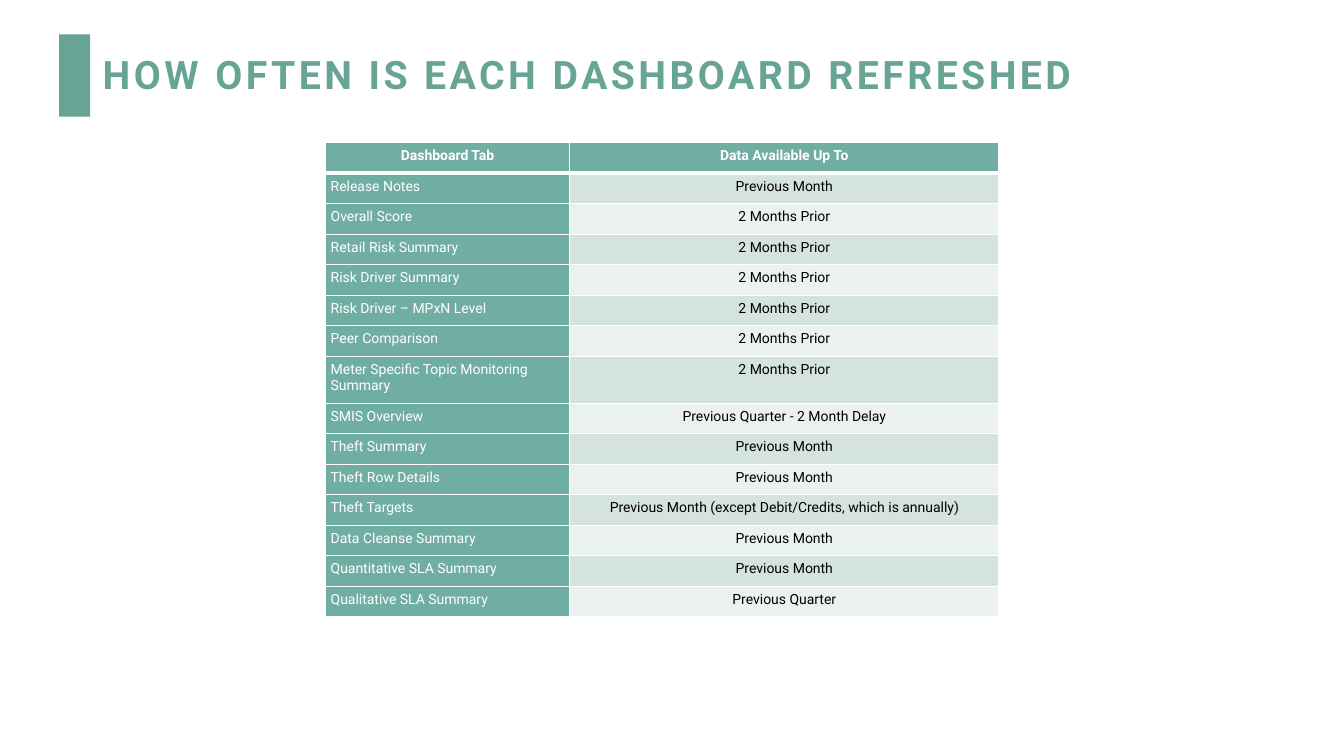
"""Build the slide on how often each dashboard is refreshed."""
from lxml.etree import SubElement
from pptx import Presentation
from pptx.dml.color import RGBColor
from pptx.enum.shapes import MSO_SHAPE
from pptx.enum.text import MSO_ANCHOR, PP_ALIGN
from pptx.oxml.ns import qn
from pptx.util import Pt

FONT = "Roboto"
HUES = {"title": "68A495", "teal": "70ADA3", "dark": "D5E3E0",
        "light": "EBF1F0", "white": "FFFFFF", "head": "FEFEFE", "black": "000000"}
ROWS = [
    ("Dashboard Tab", "Data Available Up To"),
    ("Release Notes", "Previous Month"),
    ("Overall Score", "2 Months Prior"),
    ("Retail Risk Summary", "2 Months Prior"),
    ("Risk Driver Summary", "2 Months Prior"),
    ("Risk Driver – MPxN Level", "2 Months Prior"),
    ("Peer Comparison", "2 Months Prior"),
    ("Meter Specific Topic Monitoring Summary", "2 Months Prior"),
    ("SMIS Overview", "Previous Quarter - 2 Month Delay"),
    ("Theft Summary", "Previous Month"),
    ("Theft Row Details", "Previous Month"),
    ("Theft Targets", "Previous Month (except Debit/Credits, which is annually)"),
    ("Data Cleanse Summary", "Previous Month"),
    ("Quantitative SLA Summary", "Previous Month"),
    ("Qualitative SLA Summary", "Previous Quarter"),
]
TALL = 7


def add_run(para, text, size, hue, bold):
    run = para.add_run()
    run.text = text
    run.font.name = FONT
    run.font.size = Pt(size)
    run.font.bold = bold
    run.font.color.rgb = RGBColor.from_string(HUES[hue])
    return run


def add_edge(cell, side, width):
    props = cell._tc.get_or_add_tcPr()
    line = SubElement(props, qn(f"a:{side}"), w=str(Pt(width)))
    fill = SubElement(line, qn("a:solidFill"))
    SubElement(fill, qn("a:srgbClr"), val=HUES["white"])


deck = Presentation()
deck.slide_width, deck.slide_height = Pt(960), Pt(540)
slide = deck.slides.add_slide(deck.slide_layouts[5])

bar = slide.shapes.add_shape(MSO_SHAPE.RECTANGLE, Pt(42.2), Pt(24.6), Pt(22.2), Pt(58.8))
bar.shadow.inherit = False
bar.fill.solid()
bar.fill.fore_color.rgb = RGBColor.from_string(HUES["title"])
bar.line.fill.background()

title = slide.shapes.title
title.left, title.top, title.width, title.height = Pt(66.2), Pt(28.8), Pt(731), Pt(51.8)
frame = title.text_frame
frame.word_wrap = True
frame.vertical_anchor = MSO_ANCHOR.MIDDLE
para = frame.paragraphs[0]
para.alignment = PP_ALIGN.LEFT
para.line_spacing = 0.9
run = add_run(para, "HOW OFTEN IS EACH DASHBOARD REFRESHED", 28, "title", True)
run.font._element.set("spc", "250")

grid = slide.shapes.add_table(len(ROWS), 2, Pt(232.6), Pt(102), Pt(481), Pt(338.6)).table
grid.columns[0].width, grid.columns[1].width = Pt(174.2), Pt(306.8)
for r, texts in enumerate(ROWS):
    grid.rows[r].height = Pt(33.4 if r == TALL else 21.8)
    for c, text in enumerate(texts):
        cell = grid.cell(r, c)
        cell.margin_left = cell.margin_right = Pt(3.6)
        cell.margin_top = cell.margin_bottom = Pt(3.6)
        add_edge(cell, "lnL", 1)
        add_edge(cell, "lnR", 1)
        add_edge(cell, "lnT", 3 if r == 1 else 1)
        add_edge(cell, "lnB", 3 if r == 0 else 1)
        band = "dark" if r % 2 else "light"
        cell.fill.solid()
        cell.fill.fore_color.rgb = RGBColor.from_string(
            HUES["teal" if r == 0 or c == 0 else band])
        para = cell.text_frame.paragraphs[0]
        para.alignment = PP_ALIGN.CENTER if r == 0 or c else PP_ALIGN.LEFT
        hue = "white" if c == 0 else "black" if r else "head"
        add_run(para, text, 10, hue, r == 0)

deck.save("out.pptx")
